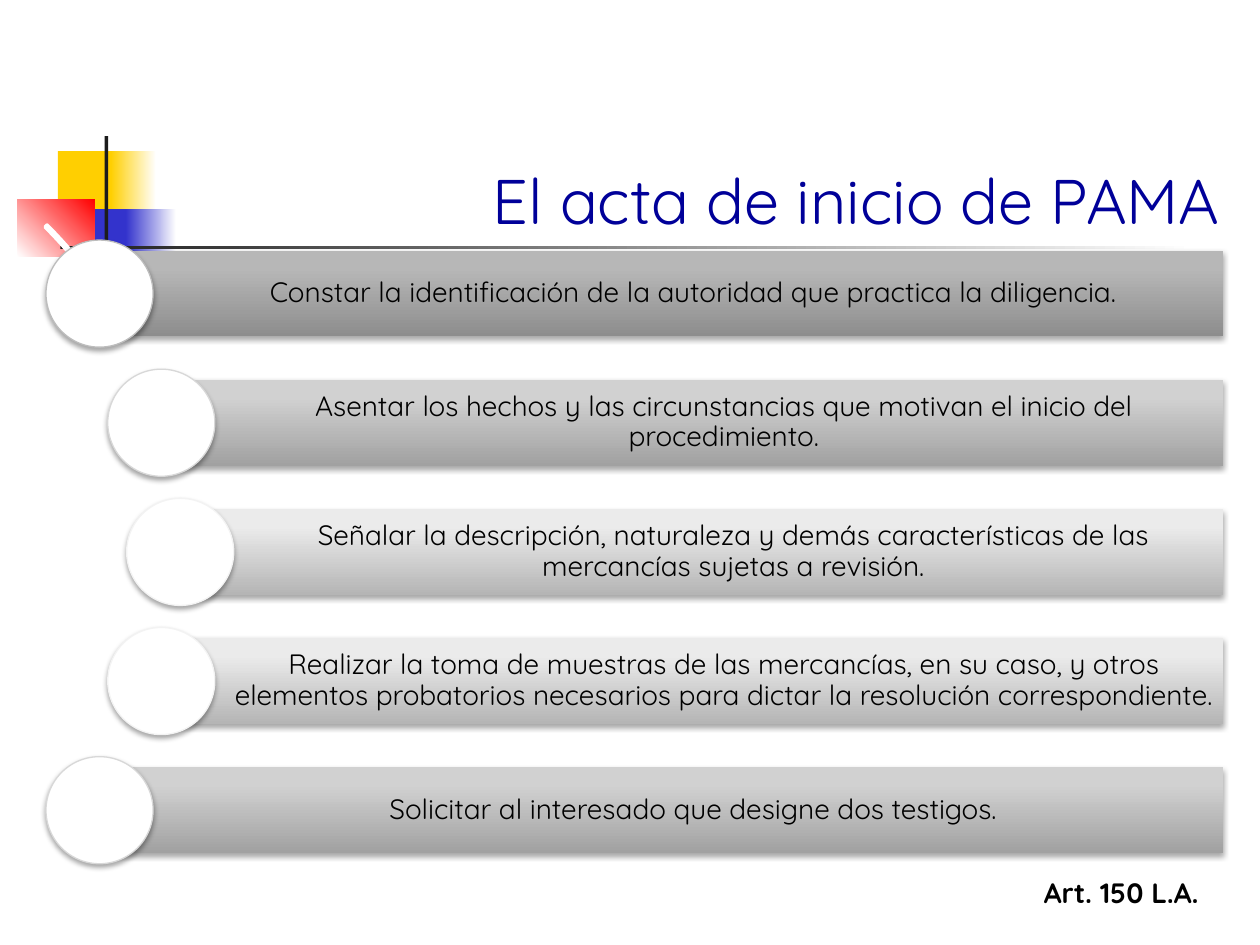
from lxml.etree import SubElement
from pptx import Presentation
from pptx.dml.color import RGBColor
from pptx.enum.shapes import MSO_SHAPE as Shape
from pptx.enum.text import MSO_ANCHOR as Anchor, MSO_AUTO_SIZE as AutoSize, PP_ALIGN as Align
from pptx.oxml.ns import qn
from pptx.util import Inches, Pt

FONT = "Quicksand"
DARK = ("BDBDBD", "8D8D8D", "B7B7B7", "B8B8B8")
MEDIUM = ("D8D8D8", "A1A1A1", "D1D1D1", "D2D2D2")
LIGHT = ("F3F3F3", "B5B5B5", "EBEBEB", "ECECEC")

STEPS = [
    (0.79, DARK, "Constar la identificación de la autoridad que practica la diligencia."),
    (1.28, MEDIUM, "Asentar los hechos y las circunstancias que motivan el inicio del procedimiento."),
    (1.43, LIGHT, "Señalar la descripción, naturaleza y demás características de las mercancías sujetas a revisión."),
    (1.28, LIGHT, "Realizar la toma de muestras de las mercancías, en su caso, y otros elementos probatorios "
                  "necesarios para dictar la resolución correspondiente."),
    (0.79, MEDIUM, "Solicitar al interesado que designe dos testigos."),
]


def rgb(value):
    return RGBColor.from_string(value)


def fill_gradient(shape, stops, angle):
    shape.fill.gradient()
    shape.fill.gradient_angle = angle
    stop_list = shape.element.spPr.find(qn("a:gradFill")).find(qn("a:gsLst"))
    for stop in list(stop_list):
        stop_list.remove(stop)
    for position, color in stops:
        stop = SubElement(stop_list, qn("a:gs"), pos=str(position * 1000))
        SubElement(stop, qn("a:srgbClr"), val=color)


def add_shadow(shape):
    effects = shape.element.spPr.find(qn("a:effectLst"))
    shadow = SubElement(effects, qn("a:outerShdw"), blurRad=str(Pt(3.1)), dist=str(Pt(1.8)),
                        dir="5400000", rotWithShape="0")
    color = SubElement(shadow, qn("a:srgbClr"), val="000000")
    SubElement(color, qn("a:alpha"), val="35000")


def add_plain_shape(slide, kind, box, color=None):
    shape = slide.shapes.add_shape(kind, *map(Inches, box))
    shape.shadow.inherit = False
    shape.line.fill.background()
    if color:
        shape.fill.solid()
        shape.fill.fore_color.rgb = rgb(color)
    else:
        shape.fill.background()
    return shape


def outline(shape, color, width):
    shape.line.color.rgb = rgb(color)
    shape.line.width = Pt(width)


def write(shape, text, size, color, align, bold=False):
    paragraph = shape.text_frame.paragraphs[0]
    paragraph.text = text
    paragraph.alignment = align
    font = paragraph.font
    font.name, font.size, font.bold = FONT, Pt(size), bold
    font.color.rgb = rgb(color)
    return paragraph


def add_ornament(slide, left, top):
    pieces = [
        (0.32, 0.12, 0.48, 0.52, "FFCF01", None, 0),
        (0.74, 0.12, 0.36, 0.52, "FFCF01", "FFFFFF", 0),
        (0.45, 0.58, 0.46, 0.52, "3333CC", None, 0),
        (0.86, 0.58, 0.4, 0.52, "3333CC", "FFFFFF", 0),
        (0, 0.5, 0.61, 0.46, "FFFFFF", "FF0000", 45),
        (0.69, 0, 0.03, 1.15, "1C1C1C", None, 0),
        (0.34, 0.87, 9, 0.03, "1C1C1C", "FFFFFF", 0),
    ]
    for x, y, width, height, start, end, angle in pieces:
        piece = add_plain_shape(slide, Shape.RECTANGLE, (left + x, top + y, width, height), start)
        if end:
            fill_gradient(piece, [(0, start), (100, end)], angle)


def add_title(slide, box):
    title = slide.shapes.title
    title.left, title.top, title.width, title.height = map(Inches, box)
    frame = title.text_frame
    frame.auto_size = AutoSize.NONE
    frame.vertical_anchor = Anchor.BOTTOM
    write(title, "El acta de inicio de PAMA", 36, "000099", Align.RIGHT)


def add_step(slide, box, colors, text):
    left, top, width, height = box
    edge, *shades = colors
    bar = add_plain_shape(slide, Shape.RECTANGLE, box)
    fill_gradient(bar, zip((0, 80, 100), shades), 90)
    add_shadow(bar)
    frame = bar.text_frame
    frame.word_wrap = True
    frame.vertical_anchor = Anchor.MIDDLE
    frame.margin_left = Inches(0.54)
    frame.margin_top = frame.margin_right = frame.margin_bottom = Inches(0.04)
    write(bar, text, 16, "000000", Align.CENTER).line_spacing = 0.9

    diameter = 0.85
    circle_box = (left - diameter / 2, top + (height - diameter) / 2, diameter, diameter)
    circle = add_plain_shape(slide, Shape.OVAL, circle_box, "FFFFFF")
    outline(circle, edge, 0.75)
    add_shadow(circle)


def add_step_list(slide, top, right, pitch, height):
    arc = add_plain_shape(slide, Shape.BLOCK_ARC, (-5.9, 0.71, 7.35, 7.35))
    for index, value in enumerate((189, 27, 0.003)):
        arc.adjustments[index] = value
    outline(arc, "FFFFFF", 2)
    for index, (left, colors, text) in enumerate(STEPS):
        add_step(slide, (left, top + index * pitch, right - left, height), colors, text)


def add_citation(slide, box):
    citation = slide.shapes.add_textbox(*map(Inches, box))
    citation.text_frame.word_wrap = True
    citation.text_frame.auto_size = AutoSize.SHAPE_TO_FIT_TEXT
    write(citation, "Art. 150 L.A.", 16, "000000", Align.CENTER, bold=True)


def main():
    presentation = Presentation()
    presentation.slide_width, presentation.slide_height = Inches(10), Inches(7.5)
    slide = presentation.slides.add_slide(presentation.slide_layouts[5])
    add_ornament(slide, 0.14, 1.08)
    add_title(slide, (1.26, 0.68, 8.52, 1.25))
    add_step_list(slide, top=1.99, right=9.71, pitch=1.025, height=0.68)
    add_citation(slide, (8.15, 6.9, 1.5, 0.37))
    presentation.save("out.pptx")


if __name__ == "__main__":
    main()
